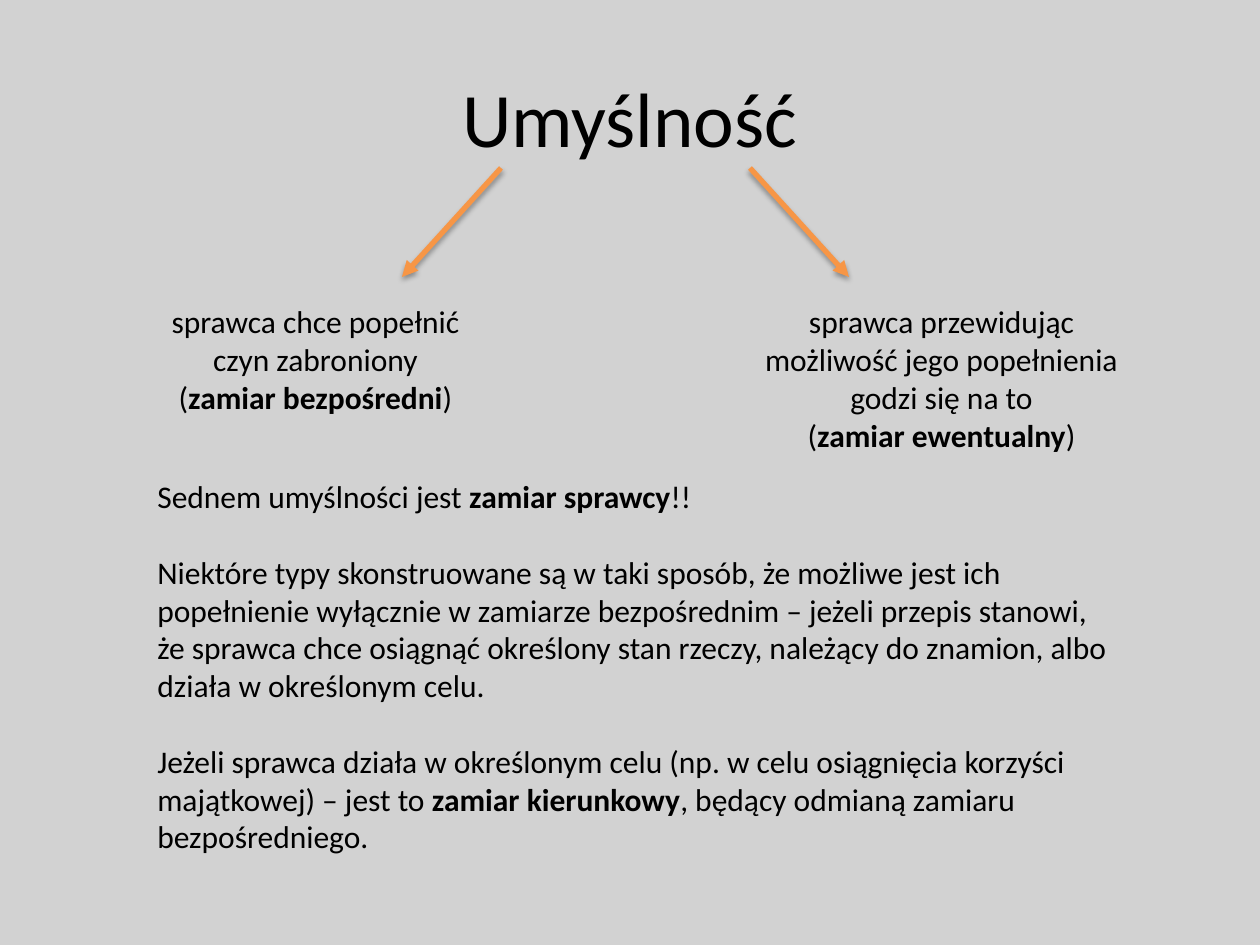
from lxml import etree
from pptx import Presentation
from pptx import util as u
from pptx.dml.color import RGBColor
from pptx.enum import shapes, text
from pptx.oxml.ns import qn

EMU_PER_PX = 914400 / 126
FONT = "Calibri"
BLACK, ORANGE, GREY = "000000", "F79646", "D2D2D2"
CENTER, LEFT = text.PP_ALIGN.CENTER, text.PP_ALIGN.LEFT


def px(length):
    return u.Emu(round(length * EMU_PER_PX))


def color(hex_value):
    return RGBColor.from_string(hex_value)


def add_text(slide, box, paragraphs, size=18, align=LEFT, gap=0,
             anchor=text.MSO_ANCHOR.TOP):
    """Each paragraph is a list of runs; every second run is bold."""
    frame = slide.shapes.add_textbox(*map(px, box)).text_frame
    frame.word_wrap = True
    frame.vertical_anchor = anchor
    for index, runs in enumerate(paragraphs):
        paragraph = frame.add_paragraph() if index else frame.paragraphs[0]
        paragraph.alignment = align
        paragraph.space_before = u.Pt(gap if index else 0)
        for position, words in enumerate(runs):
            run = paragraph.add_run()
            run.text = words
            run.font.color.rgb = color(BLACK)
            style = {"name": FONT, "size": u.Pt(size), "bold": position % 2 == 1}
            for name, value in style.items():
                setattr(run.font, name, value)


def add_arrow(slide, start, end):
    arrow = slide.shapes.add_connector(
        shapes.MSO_CONNECTOR.STRAIGHT, *map(px, start + end))
    arrow.line.color.rgb = color(ORANGE)
    arrow.line.width = u.Pt(3)
    properties = arrow.line._get_or_add_ln()
    etree.SubElement(properties, qn("a:tailEnd"), type="triangle")
    # Soft shadow straight below the line
    effects = etree.SubElement(arrow._element.spPr, qn("a:effectLst"))
    shadow = etree.SubElement(
        effects, qn("a:outerShdw"), blurRad=str(u.Pt(3.1)),
        dist=str(u.Pt(1.8)), dir="5400000", rotWithShape="0")
    shade = etree.SubElement(shadow, qn("a:srgbClr"), val=BLACK)
    etree.SubElement(shade, qn("a:alpha"), val="35000")


def main():
    deck = Presentation()
    deck.slide_width, deck.slide_height = px(1260), px(945)
    slide = deck.slides.add_slide(deck.slide_layouts[6])
    slide.background.fill.solid()
    slide.background.fill.fore_color.rgb = color(GREY)

    # Title
    add_text(slide, (63, 38, 1134, 158), [["Umyślność"]], size=44,
             align=CENTER, anchor=text.MSO_ANCHOR.MIDDLE)

    # The two kinds of intent
    add_text(slide, (132, 296, 367, 204), [
        ["sprawca chce popełnić czyn zabroniony"],
        ["(", "zamiar bezpośredni", ")"],
    ], align=CENTER)
    add_text(slide, (748, 296, 387, 165), [
        ["sprawca przewidując możliwość jego popełnienia godzi się na to"],
        ["(", "zamiar ewentualny", ")"],
    ], align=CENTER)

    # Arrows from the title to each kind
    add_arrow(slide, (501, 168), (402, 277))
    add_arrow(slide, (750, 168), (849, 277))

    # Explanation
    add_text(slide, (145, 471, 983, 394), [
        ["Sednem umyślności jest ", "zamiar sprawcy", "!!"],
        ["Niektóre typy skonstruowane są w taki sposób, że możliwe jest ich "
         "popełnienie wyłącznie w zamiarze bezpośrednim – jeżeli przepis "
         "stanowi, że sprawca chce osiągnąć określony stan rzeczy, należący "
         "do znamion, albo działa w określonym celu."],
        ["Jeżeli sprawca działa w określonym celu (np. w celu osiągnięcia "
         "korzyści majątkowej) – jest to ", "zamiar kierunkowy",
         ", będący odmianą zamiaru bezpośredniego."],
    ], gap=21.6)

    deck.save("out.pptx")


if __name__ == "__main__":
    main()
